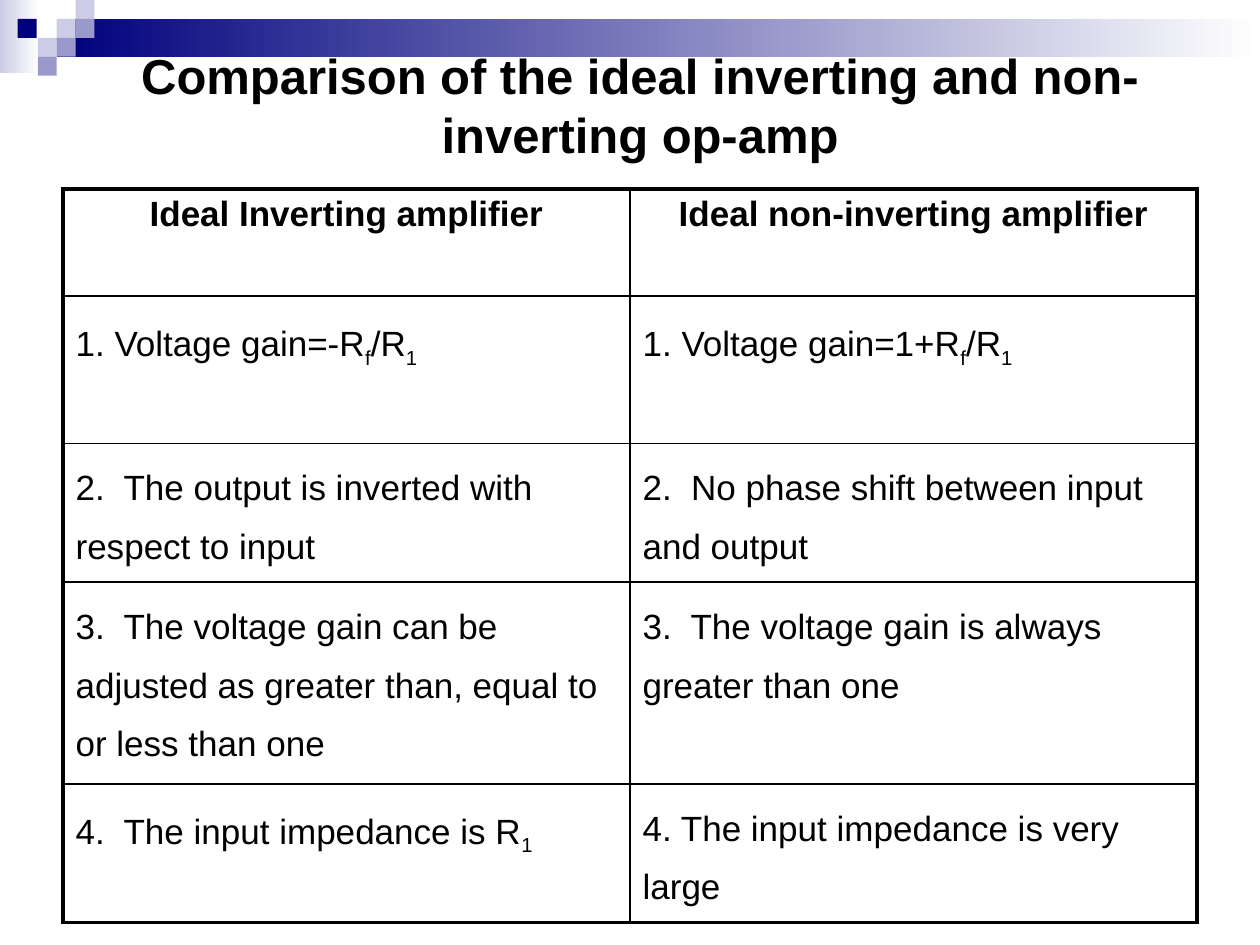
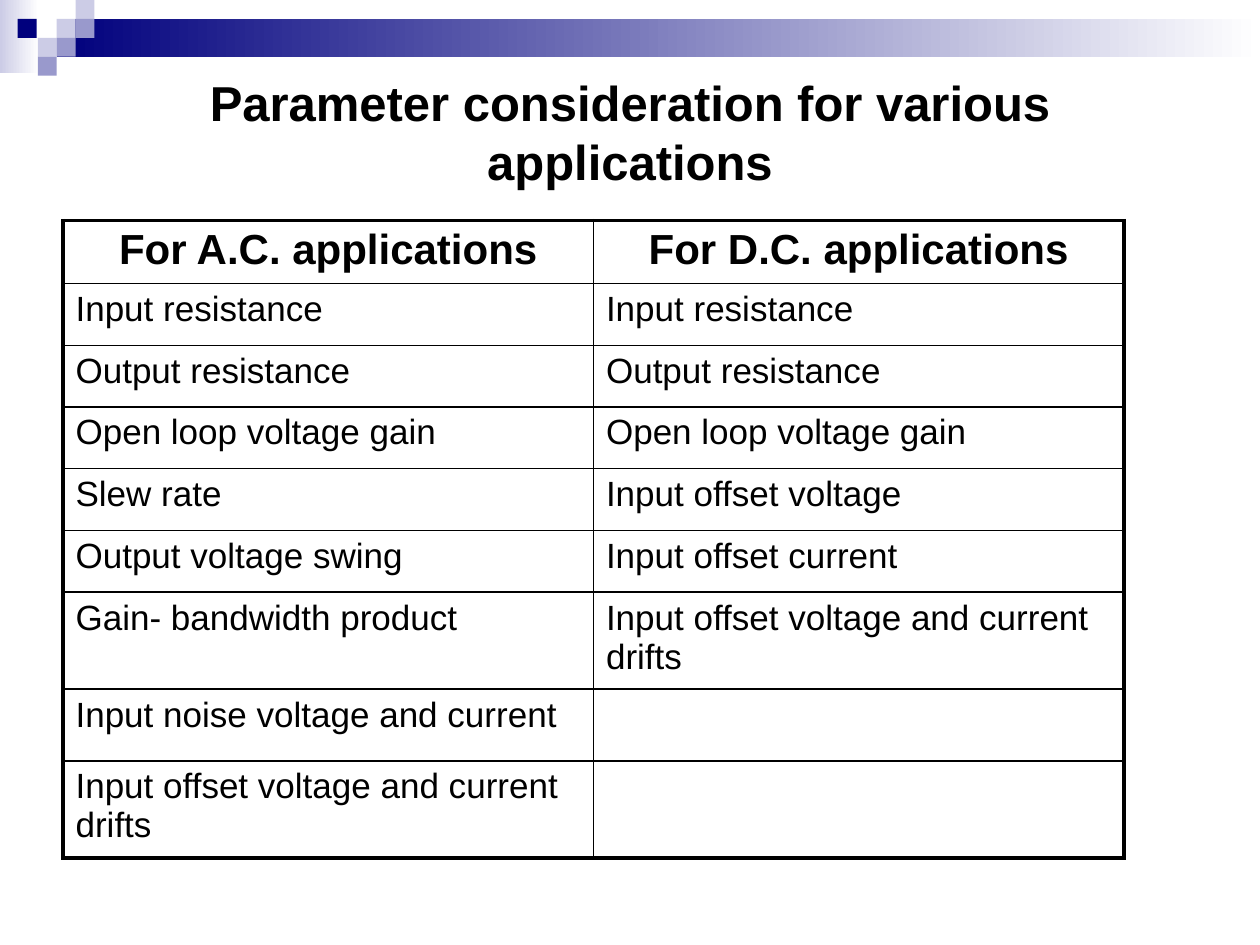
"""Build two op-amp comparison slides with a shared banner and ruled tables."""
from dataclasses import dataclass

from lxml import etree
from pptx import Presentation
from pptx.dml.color import RGBColor
from pptx.enum import shapes, text
from pptx.oxml import ns
from pptx.slide import Slide
from pptx.table import _Cell
from pptx.text.text import _Paragraph
from pptx.util import Inches, Pt


@dataclass(frozen=True)
class Theme:
    """Colours, font and type sizes shared by the slides."""
    navy: str = "00007D"
    violet: str = "9999CC"
    lilac: str = "CCCCE6"
    white: str = "FFFFFF"
    ink: str = "000000"
    font: str = "Arial"
    title_size: int = 28
    large_header_size: int = 24
    body_size: int = 20
    outer_line: float = 2.25
    inner_line: float = 1
    subscript: int = -25000


THEME = Theme()


@dataclass(frozen=True)
class Box:
    """A rectangle in inches."""
    left: float
    top: float
    width: float
    height: float


@dataclass(frozen=True)
class Block:
    """A banner rectangle, fading to a second colour when one is given."""
    box: Box
    color: str
    fade_to: str | None = None


@dataclass(frozen=True)
class ComparisonSlide:
    """A title and a two-column table whose first row is the header."""
    title: str
    title_box: Box
    table_left: float
    table_top: float
    column_width: float
    row_heights: list[float]
    rows: list[tuple[str, str]]
    header_size: int
    line_spacing: float | None = None


SQUARE = 0.15
SQUARES = [
    (0.45, 0.15, THEME.lilac),
    (0.6, 0, THEME.lilac),
    (0.6, 0.15, THEME.violet),
    (0.3, 0.3, THEME.lilac),
    (0.14, 0.15, THEME.navy),
    (0.45, 0.3, THEME.violet),
    (0.3, 0.45, THEME.violet),
]
BANNER = [
    Block(Box(0, 0, 0.31, 0.58), THEME.lilac, THEME.white),
    Block(Box(0.45, 0.15, 9.55, 0.3), THEME.navy, THEME.white),
    *(Block(Box(left, top, SQUARE, SQUARE), color) for left, top, color in SQUARES),
]

SLIDES = [
    ComparisonSlide(
        title="Comparison of the ideal inverting and non-inverting op-amp",
        title_box=Box(0.58, 0.08, 9, 1.5),
        table_left=0.5,
        table_top=1.5,
        column_width=4.5,
        row_heights=[0.85, 1.17, 1.1, 1.6, 1.1],
        rows=[
            ("Ideal Inverting amplifier", "Ideal non-inverting amplifier"),
            ("1. Voltage gain=-R_f/R_1", "1. Voltage gain=1+R_f/R_1"),
            ("2.  The output is inverted with respect to input",
             "2.  No phase shift between input and output"),
            ("3.  The voltage gain can be adjusted as greater than, equal to or less than one",
             "3.  The voltage gain is always greater than one"),
            ("4.  The input impedance is R_1", "4. The input impedance is very large"),
        ],
        header_size=THEME.body_size,
        line_spacing=1.5,
    ),
    ComparisonSlide(
        title="Parameter consideration for various applications",
        title_box=Box(0.5, 0.5, 9, 1.08),
        table_left=0.5,
        table_top=1.75,
        column_width=4.21,
        row_heights=[0.5] + [0.49] * 5 + [0.77, 0.57, 0.77],
        rows=[
            ("For A.C. applications", "For D.C. applications"),
            ("Input resistance", "Input resistance"),
            ("Output resistance", "Output resistance"),
            ("Open loop voltage gain", "Open loop voltage gain"),
            ("Slew rate", "Input offset voltage"),
            ("Output voltage swing", "Input offset current"),
            ("Gain- bandwidth product", "Input offset voltage and current drifts"),
            ("Input noise voltage and current", ""),
            ("Input offset voltage and current drifts", ""),
        ],
        header_size=THEME.large_header_size,
    ),
]


def place(box: Box) -> tuple[int, int, int, int]:
    """Convert a box to slide lengths."""
    return Inches(box.left), Inches(box.top), Inches(box.width), Inches(box.height)


def write(paragraph: _Paragraph, content: str, *, size: int, bold: bool = False,
          centered: bool = False, line_spacing: float | None = None) -> None:
    """Write text in which an underscore makes the next character a subscript."""
    paragraph.alignment = text.PP_ALIGN.CENTER if centered else text.PP_ALIGN.LEFT
    if line_spacing:
        paragraph.line_spacing = line_spacing
    first, *others = content.split("_")
    pieces = [(first, False)]
    for other in others:
        pieces += [(other[:1], True), (other[1:], False)]
    for piece, lowered in pieces:
        if not piece:
            continue
        run = paragraph.add_run()
        run.text = piece
        run.font.name = THEME.font
        run.font.size = Pt(size)
        run.font.bold = bold
        run.font.color.rgb = RGBColor.from_string(THEME.ink)
        if lowered:
            run.font._element.set("baseline", str(THEME.subscript))


def draw_block(slide: Slide, block: Block) -> None:
    """Draw one banner rectangle."""
    shape = slide.shapes.add_shape(shapes.MSO_SHAPE.RECTANGLE, *place(block.box))
    shape.shadow.inherit = False
    shape.line.fill.background()
    if block.fade_to:
        shape.fill.gradient()
        shape.fill.gradient_angle = 0
        for stop, color in zip(shape.fill.gradient_stops, (block.color, block.fade_to)):
            stop.color.rgb = RGBColor.from_string(color)
    else:
        shape.fill.solid()
        shape.fill.fore_color.rgb = RGBColor.from_string(block.color)


def draw_title(slide: Slide, title: str, box: Box) -> None:
    """Draw the centred bold title."""
    frame = slide.shapes.add_textbox(*place(box)).text_frame
    frame.word_wrap = True
    frame.vertical_anchor = text.MSO_ANCHOR.MIDDLE
    write(frame.paragraphs[0], title, size=THEME.title_size, bold=True, centered=True)


def set_borders(cell: _Cell, outer_sides: dict[str, bool]) -> None:
    """Rule each side of a cell, heavier where it meets the table's edge."""
    properties = cell._tc.get_or_add_tcPr()
    for side, outer in outer_sides.items():
        width = Pt(THEME.outer_line if outer else THEME.inner_line)
        line = etree.SubElement(properties, ns.qn(f"a:ln{side}"), w=str(width))
        fill = etree.SubElement(line, ns.qn("a:solidFill"))
        etree.SubElement(fill, ns.qn("a:srgbClr"), val=THEME.ink)


def draw_table(slide: Slide, content: ComparisonSlide) -> None:
    """Draw the ruled comparison table."""
    row_count, column_count = len(content.rows), len(content.rows[0])
    box = Box(content.table_left, content.table_top,
              content.column_width * column_count, sum(content.row_heights))
    table = slide.shapes.add_table(row_count, column_count, *place(box)).table
    table.first_row = table.horz_banding = False
    for column in table.columns:
        column.width = Inches(content.column_width)
    for row_index, (height, labels) in enumerate(zip(content.row_heights, content.rows)):
        table.rows[row_index].height = Inches(height)
        header = row_index == 0
        for column_index, label in enumerate(labels):
            cell = table.cell(row_index, column_index)
            set_borders(cell, {
                "L": column_index == 0,
                "R": column_index == column_count - 1,
                "T": header,
                "B": row_index == row_count - 1,
            })
            cell.fill.solid()
            cell.fill.fore_color.rgb = RGBColor.from_string(THEME.white)
            write(cell.text_frame.paragraphs[0], label,
                  size=content.header_size if header else THEME.body_size,
                  bold=header, centered=header,
                  line_spacing=None if header else content.line_spacing)


def main() -> None:
    """Build and save the presentation."""
    presentation = Presentation()
    presentation.slide_width, presentation.slide_height = Inches(10), Inches(7.5)
    blank_layout = presentation.slide_layouts[6]
    for content in SLIDES:
        slide = presentation.slides.add_slide(blank_layout)
        for block in BANNER:
            draw_block(slide, block)
        draw_title(slide, content.title, content.title_box)
        draw_table(slide, content)
    presentation.save("out.pptx")


if __name__ == "__main__":
    main()
